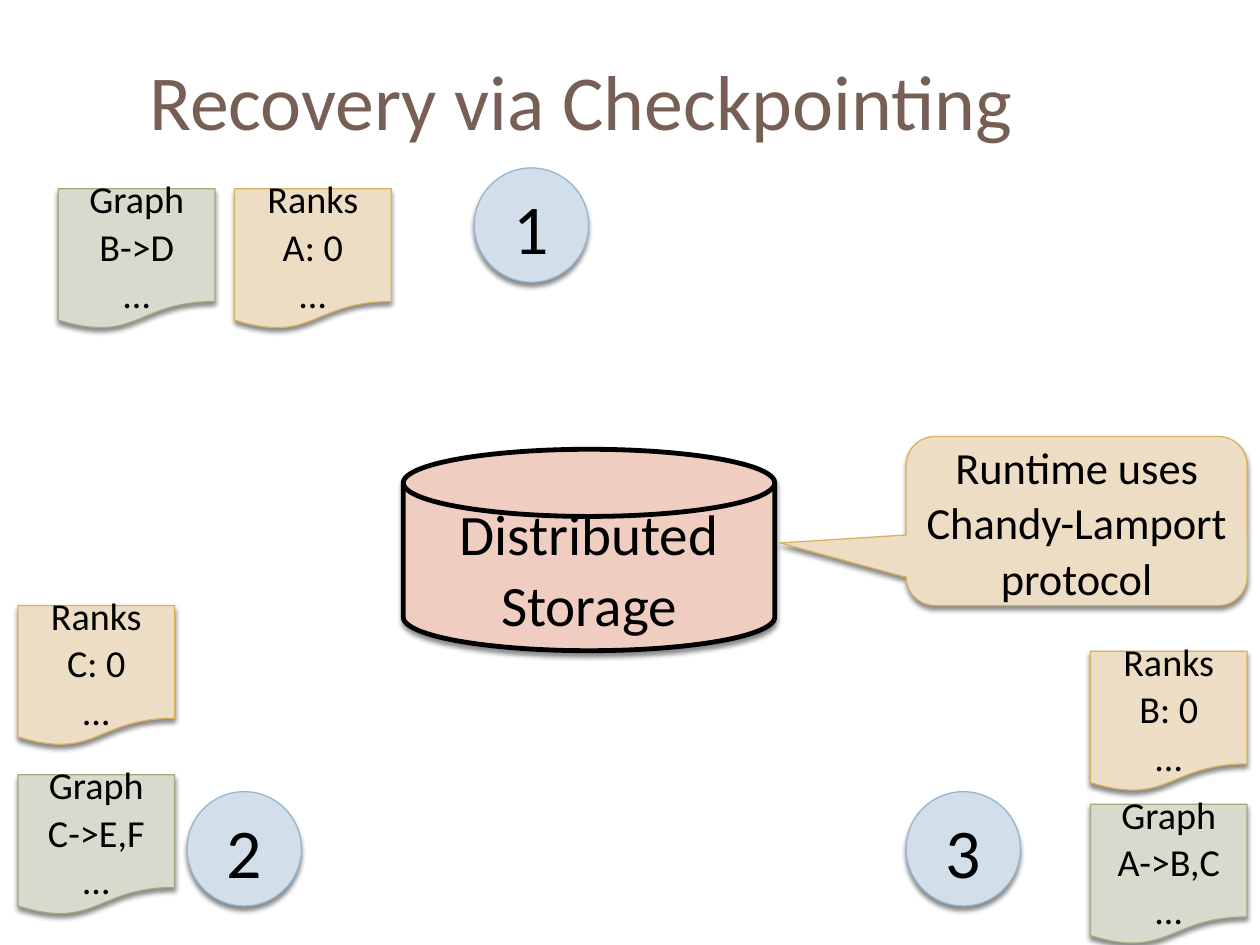
from typing import NamedTuple

from lxml import etree
from pptx import Presentation, util as u
from pptx.dml import color
from pptx.enum import shapes, text
from pptx.oxml import ns

KIND = shapes.MSO_SHAPE


class Look(NamedTuple):
    fill: str
    line: str
    width: float = 0.79


class Node(NamedTuple):
    label: str
    left: float
    top: float


class Page(NamedTuple):
    head: str
    entry: str
    left: float
    top: float


class Box(NamedTuple):
    left: float
    top: float
    width: float
    height: float


BLUE = Look("D2DEEA", "94B6D2")
SAND = Look("EDDDC4", "D8B25C")
PINK = Look("EFCDC1", "000000", 3.04)
LOOKS = {"Graph": Look("D8DACD", "A5AB81"), "Ranks": SAND}

NODES = [
    Node("1", 298.8, 105.8),
    Node("2", 117.9, 498.7),
    Node("3", 570.8, 498.7),
]
PAGES = [
    Page("Graph", "A->B,C", 686.9, 506.6),
    Page("Ranks", "A: 0", 147.7, 118.9),
    Page("Graph", "B->D", 36.8, 118.9),
    Page("Ranks", "B: 0", 686.9, 410.2),
    Page("Graph", "C->E,F", 11.3, 488),
    Page("Ranks", "C: 0", 11.3, 381.4),
]


def tint(value: str) -> color.RGBColor:
    return color.RGBColor.from_string(value)


def shade(shape) -> None:
    effects = etree.SubElement(shape._element.spPr, ns.qn("a:effectLst"))
    shadow = etree.SubElement(
        effects, ns.qn("a:outerShdw"), blurRad=str(u.Pt(3)),
        dist=str(u.Pt(2.4)), dir="5400000", rotWithShape="0")
    black = etree.SubElement(shadow, ns.qn("a:srgbClr"), val="000000")
    etree.SubElement(black, ns.qn("a:alpha"), val="45000")


def write(shape, lines: list[str], size: float, ink: str = "000000",
          align: text.PP_ALIGN = text.PP_ALIGN.CENTER, space: float = 1.04,
          inset: float = 4) -> None:
    frame = shape.text_frame
    frame.word_wrap = True
    frame.vertical_anchor = text.MSO_ANCHOR.MIDDLE
    frame.margin_left = frame.margin_right = u.Pt(inset)
    frame.text = "\n".join(lines)
    for para in frame.paragraphs:
        para.alignment = align
        para.line_spacing = space
        para.font.name = "Calibri"
        para.font.size = u.Pt(size)
        para.font.color.rgb = tint(ink)


def draw(slide, kind: KIND, box: Box, look: Look, lines: list[str],
         size: float):
    shape = slide.shapes.add_shape(kind, *map(u.Pt, box))
    shape.fill.solid()
    shape.fill.fore_color.rgb = tint(look.fill)
    shape.line.color.rgb = tint(look.line)
    shape.line.width = u.Pt(look.width)
    shade(shape)
    write(shape, lines, size)
    return shape


def main() -> None:
    deck = Presentation()
    deck.slide_width, deck.slide_height = u.Pt(793.7), u.Pt(595.28)
    slide = deck.slides.add_slide(deck.slide_layouts[6])

    draw(slide, KIND.FLOWCHART_MAGNETIC_DISK, Box(254, 283, 234, 126.9),
         PINK, ["Distributed Storage"], 36)
    title = slide.shapes.add_textbox(*map(u.Pt, Box(86, 19.9, 707.7, 85.7)))
    write(title, ["Recovery via Checkpointing"], 49, "775F55",
          text.PP_ALIGN.LEFT, 1, 8)
    for node in NODES:
        draw(slide, KIND.OVAL, Box(node.left, node.top, 72, 72), BLUE,
             [node.label], 44)
    for page in PAGES:
        draw(slide, KIND.FLOWCHART_DOCUMENT,
             Box(page.left, page.top, 98.7, 88.6), LOOKS[page.head],
             [page.head, page.entry, "…"], 24)
    note = draw(slide, KIND.ROUNDED_RECTANGULAR_CALLOUT,
                Box(570.8, 275, 214.8, 106.4), SAND,
                ["Runtime uses Chandy-Lamport protocol"], 28)
    for index, value in enumerate((-0.87, 0.13, 0.17)):
        note.adjustments[index] = value

    deck.save("out.pptx")


if __name__ == "__main__":
    main()
